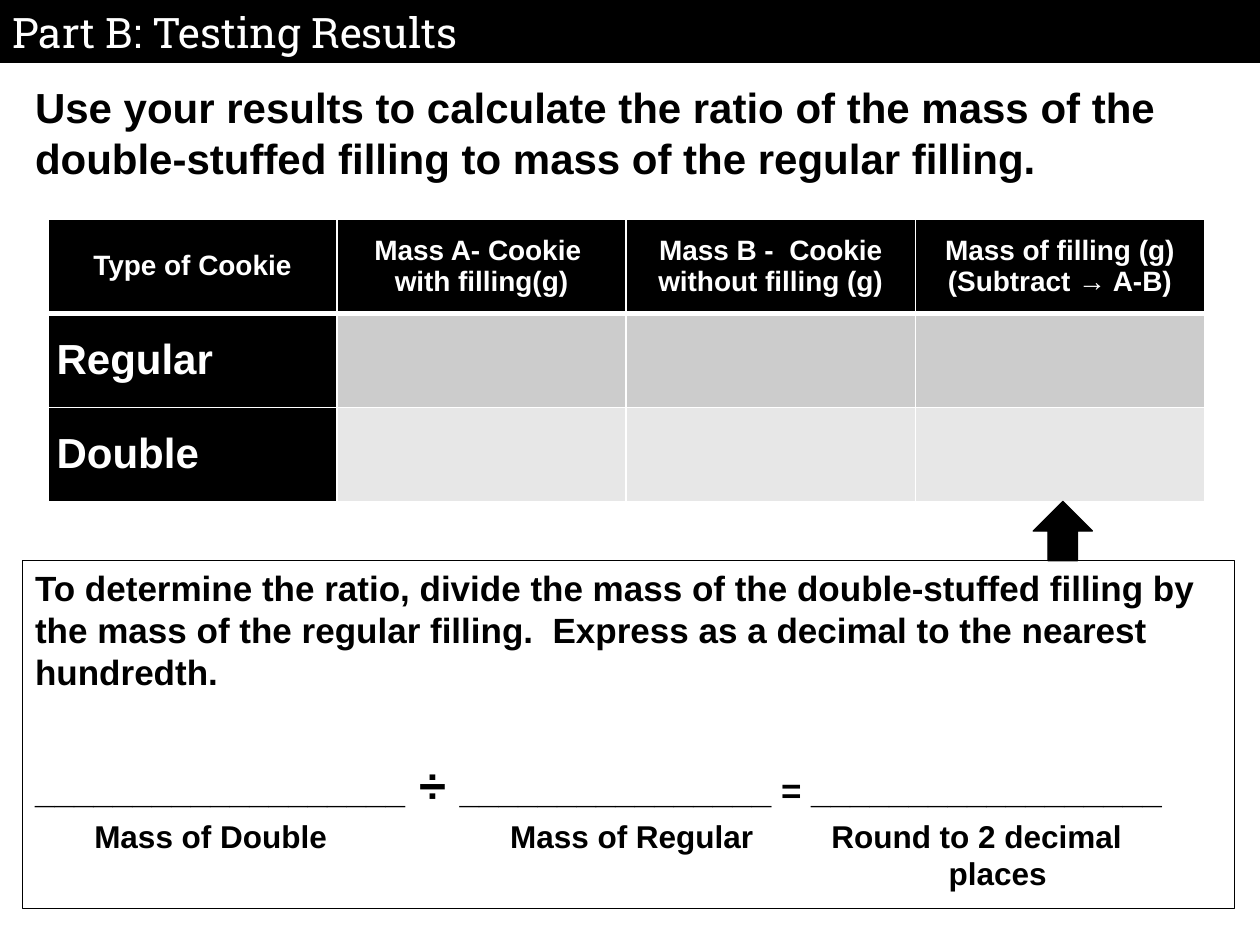
from pptx import Presentation
from pptx.dml.color import RGBColor
from pptx.enum import shapes, text
from pptx.oxml import ns, xmlchemy
from pptx import util as u
from lxml import etree

BLACK = RGBColor(0, 0, 0)
WHITE = RGBColor(255, 255, 255)
MID_GREY = RGBColor(0xCC, 0xCC, 0xCC)
LIGHT_GREY = RGBColor(0xE7, 0xE7, 0xE7)
HEADERS = ["Type of Cookie", "Mass A- Cookie \vwith filling(g)",
           "Mass B -  Cookie without filling (g)",
           "Mass of filling (g)\v(Subtract → A-B)"]
COOKIES = [("Regular", MID_GREY), ("Double", LIGHT_GREY)]


def inches(*lengths):
    """Convert plain numbers to inch lengths."""
    return [u.Inches(length) for length in lengths]


def set_values(target, **values):
    """Set each named attribute of the target."""
    for name, value in values.items():
        setattr(target, name, value)


def paint(target, color):
    """Give the target a solid fill."""
    target.fill.solid()
    target.fill.fore_color.rgb = color


def add_span(para, words, size, color=BLACK, name="Arial", bold=True):
    """Append a formatted run to the paragraph."""
    span = para.add_run()
    span.text = words
    set_values(span.font, size=u.Pt(size), name=name, bold=bold)
    span.font.color.rgb = color


def set_tabs(para, *stops):
    """Put left tab stops, in inches, on the paragraph."""
    properties = para._p.get_or_add_pPr()
    tabs = etree.SubElement(properties, ns.qn("a:tabLst"))
    for stop in stops:
        etree.SubElement(tabs, ns.qn("a:tab"), pos=str(u.Inches(stop)), algn="l")


def set_borders(cell, **widths):
    """Draw white cell borders with a point width for each side."""
    properties = cell._tc.get_or_add_tcPr()
    for index, (side, width) in enumerate(widths.items()):
        line = etree.Element(ns.qn(f"a:ln{side}"), w=str(u.Pt(width)))
        fill = etree.SubElement(line, ns.qn("a:solidFill"))
        etree.SubElement(fill, ns.qn("a:srgbClr"), val=str(WHITE))
        properties.insert(index, line)


def add_title(page, box):
    """Format the title placeholder as a black banner."""
    title = page.shapes.title
    set_values(title, **dict(zip(("left", "top", "width", "height"), inches(*box))))
    paint(title, BLACK)
    frame = title.text_frame
    set_values(frame, vertical_anchor=text.MSO_ANCHOR.MIDDLE, word_wrap=True,
               auto_size=text.MSO_AUTO_SIZE.NONE)
    para = frame.paragraphs[0]
    para.alignment = text.PP_ALIGN.LEFT
    add_span(para, "Part B: Testing Results", 24, WHITE, "Roboto Slab", False)


def add_task(page, box):
    """Add the task statement."""
    frame = page.shapes.add_textbox(*inches(*box)).text_frame
    frame.word_wrap = True
    add_span(frame.paragraphs[0], "Use your results to calculate the ratio of the mass of "
             "the double-stuffed filling to mass of the regular filling.", 24)


def fill_cell(cell, words, size, color, bottom, alignment):
    """Fill, border and label one table cell."""
    paint(cell, color)
    set_borders(cell, L=1, R=1, T=1 if size == 16 else bottom, B=bottom)
    set_values(cell, vertical_anchor=text.MSO_ANCHOR.MIDDLE,
               **dict(zip(("margin_left", "margin_top", "margin_right", "margin_bottom"),
                          inches(0.07, 0, 0.07, 0))))
    para = cell.text_frame.paragraphs[0]
    para.alignment = alignment
    if words:
        para.text = words
        set_values(para.font, size=u.Pt(size), name="Arial", bold=True)
        para.font.color.rgb = WHITE
        for span in para.runs:
            set_values(span.font, size=u.Pt(size), name="Arial", bold=True)
            span.font.color.rgb = WHITE


def add_results(page, box):
    """Add the table for the measured masses."""
    table = page.shapes.add_table(len(COOKIES) + 1, len(HEADERS), *inches(*box)).table
    for column, header in enumerate(HEADERS):
        fill_cell(table.cell(0, column), header, 16, BLACK, 3, text.PP_ALIGN.CENTER)
        for row, (cookie, shade) in enumerate(COOKIES, 1):
            first = column == 0
            fill_cell(table.cell(row, column), cookie if first else "", 24,
                      BLACK if first else shade, 1, text.PP_ALIGN.LEFT)
    for column in range(len(HEADERS)):
        set_borders(table.cell(1, column), T=3)


def add_block(page, kind, box):
    """Add a black-outlined shape without shadow."""
    block = page.shapes.add_shape(kind, *inches(*box))
    block.shadow.inherit = False
    block.line.color.rgb = BLACK
    block.line.width = u.Pt(0.75)
    return block


def add_ratio(page, box):
    """Add the framed instructions and the ratio to fill in."""
    block = add_block(page, shapes.MSO_SHAPE.RECTANGLE, box)
    block.fill.background()
    frame = block.text_frame
    set_values(frame, word_wrap=True, vertical_anchor=text.MSO_ANCHOR.TOP)
    lines = [
        [("To determine the ratio, divide the mass of the double-stuffed filling by the "
          "mass of the regular filling.  Express as a decimal to the nearest hundredth.", 20)],
        [("_" * 19, 20), (" ÷ ", 28), ("_" * 16 + " = " + "_" * 18, 20)],
        [("\tMass of Double\tMass of Regular\tRound to 2 decimal", 18)],
        [("\tplaces", 18)],
    ]
    paras = [frame.paragraphs[0]] + [frame.add_paragraph() for _ in lines[1:]]
    for para, spans in zip(paras, lines):
        para.alignment = text.PP_ALIGN.LEFT
        for words, size in spans:
            add_span(para, words, size)
    paras[1].space_before = u.Pt(35)
    paras[2].space_before = u.Pt(2)
    set_tabs(paras[2], 0.47, 3.77, 6.32)
    set_tabs(paras[3], 7.25)


def add_arrow(page, box):
    """Add the arrow that points at the filling column."""
    paint(add_block(page, shapes.MSO_SHAPE.UP_ARROW, box), BLACK)


def main():
    """Build and save the slide."""
    deck = Presentation()
    set_values(deck, slide_width=u.Inches(10), slide_height=u.Inches(7.5))
    page = deck.slides.add_slide(deck.slide_layouts[5])
    add_title(page, (0, 0, 10.02, 0.5))
    add_task(page, (0.18, 0.6, 9.84, 0.91))
    add_results(page, (0.38, 1.74, 9.18, 2.24))
    add_ratio(page, (0.18, 4.45, 9.62, 2.76))
    add_arrow(page, (8.2, 3.98, 0.47, 0.47))
    deck.save("out.pptx")


if __name__ == "__main__":
    main()
